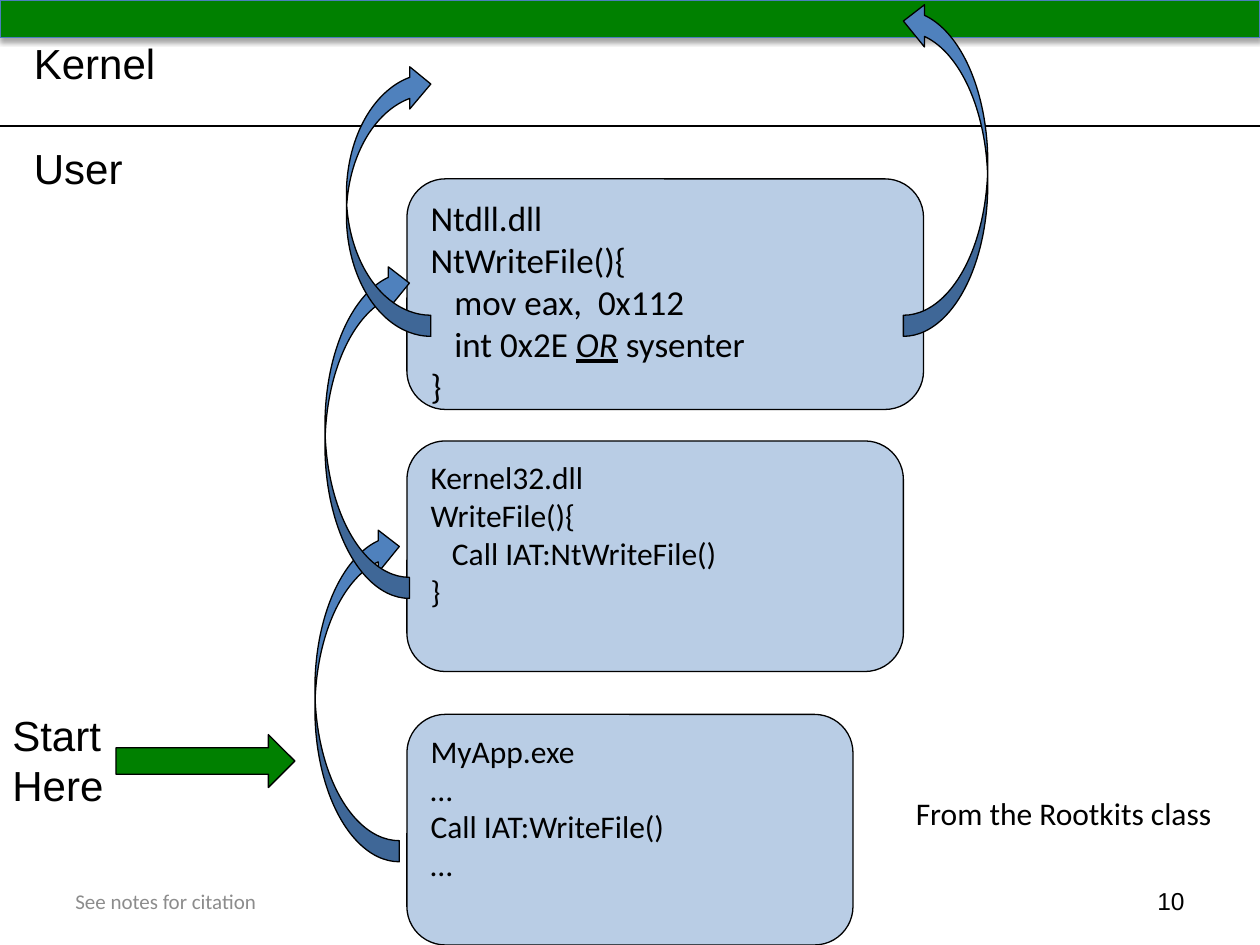
import pptx
import pptx.dml.color
import pptx.enum.shapes
import pptx.enum.text
import pptx.oxml
import pptx.oxml.ns
import pptx.util
from pptx.util import Inches

SHAPE = pptx.enum.shapes.MSO_SHAPE
ALIGN = pptx.enum.text.PP_ALIGN
ANCHOR = pptx.enum.text.MSO_ANCHOR
AUTO_SIZE = pptx.enum.text.MSO_AUTO_SIZE

BLACK, GREEN, BLUE, PALE_BLUE = "000000", "008000", "4F81BD", "B9CDE5"
GREY, BAR_EDGE = "8C8C8C", "4B7EBC"


def rgb(code):
    return pptx.dml.color.RGBColor.from_string(code)


def set_format(target, values):
    for name, value in values.items():
        setattr(target, name, value)


class Painter:
    def __init__(self, slide):
        self.slide = slide
        self.line_width = pptx.util.Pt(0.75)

    def outline(self, item, color=BLACK):
        item.line.color.rgb = rgb(color)
        item.line.width = self.line_width

    def shape(self, kind, left, top, width, height, fill, edge=BLACK):
        shape = self.slide.shapes.add_shape(
            kind, Inches(left), Inches(top), Inches(width), Inches(height))
        shape.shadow.inherit = False
        shape.fill.solid()
        shape.fill.fore_color.rgb = rgb(fill)
        self.outline(shape, edge)
        return shape

    def shadowed_bar(self, width, height):
        bar = self.shape(SHAPE.RECTANGLE, 0, 0, width, height, GREEN, BAR_EDGE)
        effects = bar.element.spPr.find(pptx.oxml.ns.qn("a:effectLst"))
        effects.append(pptx.oxml.parse_xml(
            f'<a:outerShdw {pptx.oxml.ns.nsdecls("a")} blurRad="39370" dist="22860" '
            'dir="5400000" rotWithShape="0"><a:srgbClr val="000000">'
            '<a:alpha val="35000"/></a:srgbClr></a:outerShdw>'))

    def call_arrow(self, left, top, height, flips):
        arrow = self.shape(SHAPE.CURVED_LEFT_ARROW, left, top, 0.67, height, BLUE)
        for flip in flips:
            arrow.element.spPr.xfrm.set(flip, "1")

    def divider(self, top, width):
        line = self.slide.shapes.add_connector(
            pptx.enum.shapes.MSO_CONNECTOR.STRAIGHT,
            Inches(0), Inches(top), Inches(width), Inches(top))
        self.outline(line)
        line.element.spPr.append(pptx.oxml.parse_xml(
            f'<a:effectLst {pptx.oxml.ns.nsdecls("a")}/>'))

    def fill_text(self, frame, lines, size, font="Calibri", color=BLACK,
                  align=ALIGN.LEFT, indented=()):
        """Fill the frame; a line is a string or a list of (text, format) spans."""
        for index, line in enumerate(lines):
            para = frame.paragraphs[0] if index == 0 else frame.add_paragraph()
            para.alignment = align
            if index in indented:
                margin = pptx.util.Pt(size * 0.68)
                para._p.get_or_add_pPr().set("marL", str(margin))
            spans = [(line, {})] if isinstance(line, str) else line
            for text, extra in spans:
                span = para.add_run()
                span.text = text
                set_format(span.font, {"name": font, "size": pptx.util.Pt(size), **extra})
                span.font.color.rgb = rgb(color)

    def code_box(self, top, width, lines, size=18, indented=()):
        box = self.shape(SHAPE.ROUNDED_RECTANGLE, 3.23, top, width, 1.83, PALE_BLUE)
        set_format(box.text_frame, {"word_wrap": True, "vertical_anchor": ANCHOR.TOP})
        self.fill_text(box.text_frame, lines, size, indented=indented)

    def label(self, left, top, width, height, lines, size, frame_format, **style):
        box = self.slide.shapes.add_textbox(
            Inches(left), Inches(top), Inches(width), Inches(height))
        set_format(box.text_frame, frame_format)
        self.fill_text(box.text_frame, lines, size, **style)


def main():
    deck = pptx.Presentation()
    set_format(deck, {"slide_width": Inches(10), "slide_height": Inches(7.5)})
    painter = Painter(deck.slides.add_slide(deck.slide_layouts[6]))

    footer = {"word_wrap": True, "vertical_anchor": ANCHOR.MIDDLE}
    heading = {"word_wrap": False, "auto_size": AUTO_SIZE.SHAPE_TO_FIT_TEXT}
    caption = {**heading, "word_wrap": True}

    painter.shadowed_bar(10, 0.3)
    painter.label(7.17, 6.95, 2.33, 0.4, ["10"], 14, footer,
                  font="Arial", align=ALIGN.RIGHT)

    painter.code_box(3.5, 3.94, [
        "Kernel32.dll", "WriteFile(){", "Call IAT:NtWriteFile()", "}"], indented=[2])
    painter.code_box(5.67, 3.54, ["MyApp.exe", "…", "Call IAT:WriteFile()", "…"])
    emphasis = {"italic": True, "underline": True}
    painter.code_box(1.42, 4.1, [
        "Ntdll.dll", "NtWriteFile(){", "mov eax,  0x112",
        [("int 0x2E ", {}), ("OR", emphasis), (" ", {"italic": True}), ("sysenter", {})],
        "}"], size=20, indented=[2, 3])

    painter.divider(1, 10)
    painter.label(0.17, 0.25, 1.18, 0.51, ["Kernel"], 24, heading, font="Arial")
    painter.label(0.17, 1.08, 0.92, 0.51, ["User"], 24, heading, font="Arial")

    for left, top, height in [(2.5, 4.17, 2.67), (2.58, 2.08, 2.67), (2.75, 0.5, 2.17)]:
        painter.call_arrow(left, top, height, ["flipH", "flipV"])
    painter.call_arrow(7.17, 0, 2.67, ["flipV"])

    painter.shape(SHAPE.RIGHT_ARROW, 0.92, 5.83, 1.42, 0.42, GREEN)
    painter.label(0, 5.58, 0.93, 0.91, ["Start", "Here"], 24, heading, font="Arial")
    painter.label(0.5, 6.95, 2.33, 0.4, ["See notes for citation"], 12, footer, color=GREY)
    painter.label(7.17, 6.25, 2.8, 0.4, ["From the Rootkits class"], 18, caption)

    deck.save("out.pptx")


if __name__ == "__main__":
    main()
